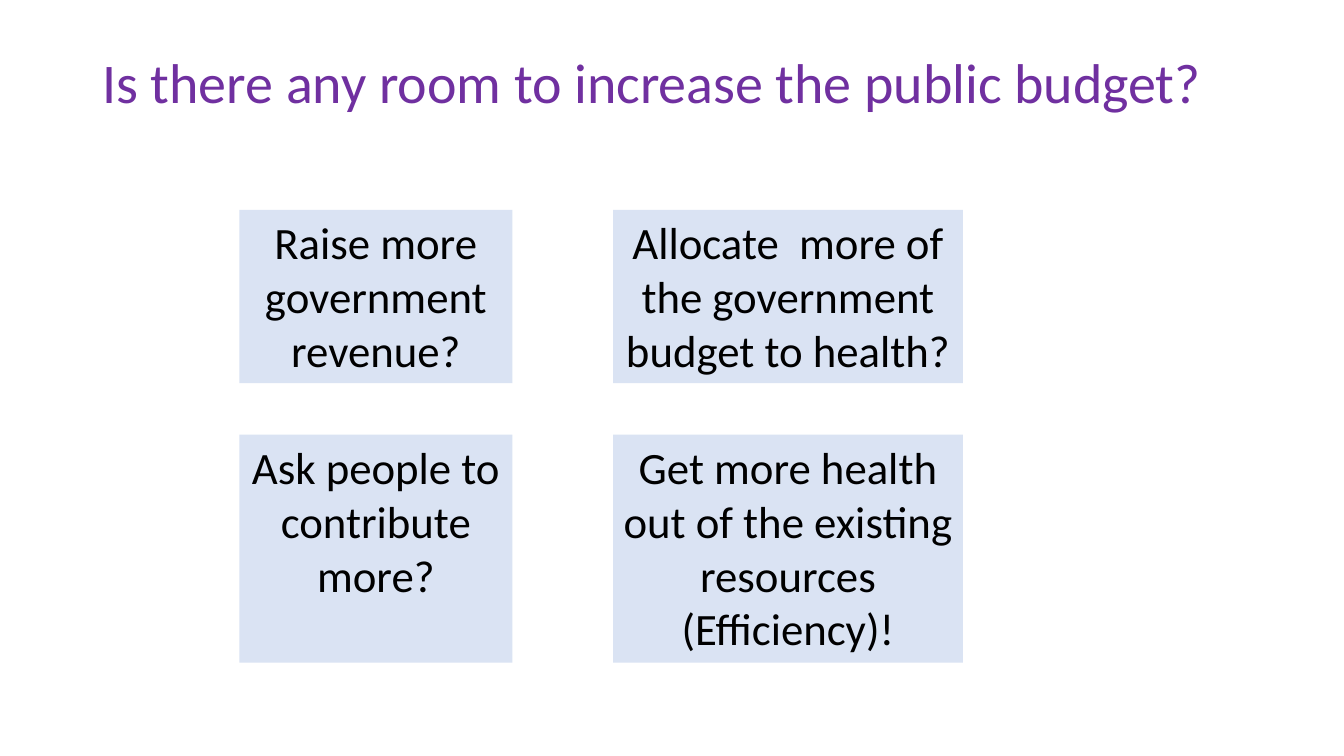
"""Build a slide of four options for increasing the public health budget."""
from pptx import Presentation
from pptx.dml.color import RGBColor
from pptx.enum.shapes import MSO_SHAPE
from pptx.enum.text import MSO_ANCHOR, PP_ALIGN
from pptx.util import Pt

PX = 9525
PURPLE = RGBColor(0x70, 0x30, 0xA0)
PALE_BLUE = RGBColor(0xDA, 0xE3, 0xF3)
BLACK = RGBColor(0, 0, 0)


def write(shape, text, color, size, frame_format, paragraph_format):
    frame = shape.text_frame
    paragraph = frame.paragraphs[0]
    run = paragraph.add_run()
    run.text = text
    run.font.color.rgb = color
    font_format = {"name": "Calibri", "size": Pt(size)}
    for target, values in (
        (frame, {"word_wrap": True, **frame_format}),
        (paragraph, paragraph_format),
        (run.font, font_format),
    ):
        for attribute, value in values.items():
            setattr(target, attribute, value)


deck = Presentation()
deck.slide_width = 1280 * PX
deck.slide_height = 720 * PX
slide = deck.slides.add_slide(deck.slide_layouts[6])

question = slide.shapes.add_textbox(88 * PX, 12 * PX, 1129 * PX, 138 * PX)
write(question, "Is there any room to increase the public budget?", PURPLE, 40,
      {"vertical_anchor": MSO_ANCHOR.MIDDLE},
      {"alignment": PP_ALIGN.LEFT, "line_spacing": 0.9})

columns = [(228, 260), (584, 333)]
rows = [(200, 165), (414, 217)]
options = [
    ["Raise more government revenue?",
     "Allocate  more of the government budget to health?"],
    ["Ask people to contribute more?",
     "Get more health out of the existing resources (Efficiency)!"],
]

for (top, height), row_options in zip(rows, options):
    for (left, width), option in zip(columns, row_options):
        card = slide.shapes.add_shape(
            MSO_SHAPE.RECTANGLE, left * PX, top * PX, width * PX, height * PX)
        card.shadow.inherit = False
        card.fill.solid()
        card.fill.fore_color.rgb = PALE_BLUE
        card.line.fill.background()
        write(card, option, BLACK, 32,
              {"vertical_anchor": MSO_ANCHOR.TOP},
              {"alignment": PP_ALIGN.CENTER})

deck.save("out.pptx")
